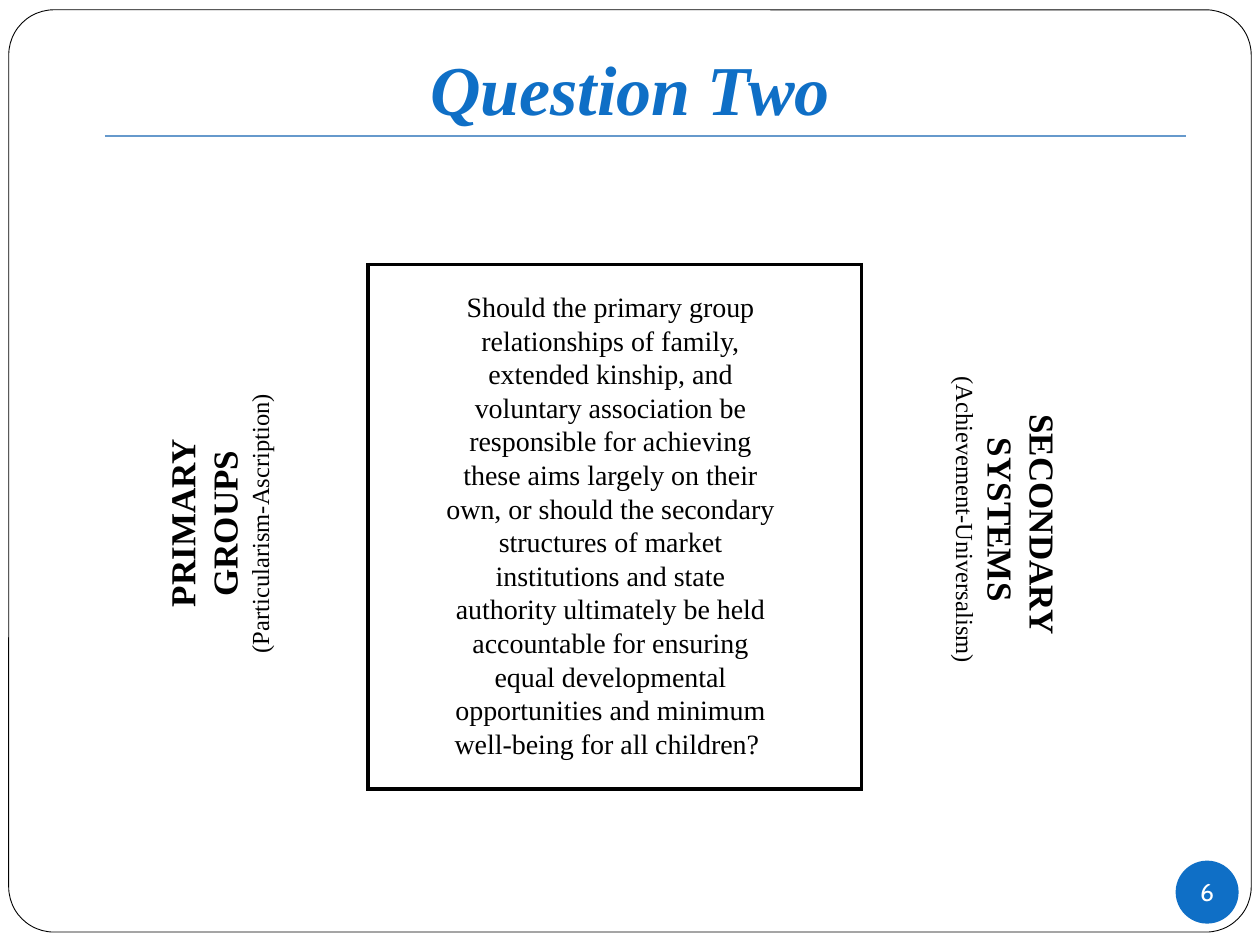
from pptx import Presentation
from pptx.dml.color import RGBColor
from pptx.enum.shapes import MSO_CONNECTOR, MSO_SHAPE as Preset
from pptx.enum.text import MSO_ANCHOR as Anchor, PP_ALIGN as Align
from pptx.oxml import parse_xml
from pptx.oxml.ns import nsdecls
from pptx.util import Pt

COLORS = {"ink": "000000", "paper": "FFFFFF", "blue": "0F6FC6", "rule": "6699CC"}
SERIF = "Times New Roman"
QUESTION = (
    "Should the primary group relationships of family, extended kinship, and "
    "voluntary association be responsible for achieving these aims largely on "
    "their own, or should the secondary structures of market institutions and "
    "state authority ultimately be held accountable for ensuring equal "
    "developmental opportunities and minimum well-being for all children? "
)


def color(name):
    return RGBColor.from_string(COLORS[name])


def add_text(frame, text, size, font=SERIF, ink="ink", bold=False, italic=False,
             new=False):
    """Write one centred paragraph, in a new paragraph if asked."""
    frame.word_wrap = True
    para = frame.add_paragraph() if new else frame.paragraphs[0]
    para.alignment = Align.CENTER
    span = para.add_run()
    span.text = text
    span.font.name, span.font.size = font, Pt(size)
    span.font.bold, span.font.italic = bold, italic
    span.font.color.rgb = color(ink)


def add_box(page, left, top, width, height):
    place = [Pt(value) for value in (left, top, width, height)]
    return page.shapes.add_textbox(*place).text_frame


def add_shape(page, preset, left, top, width, height, fill="paper", line=None):
    place = [Pt(value) for value in (left, top, width, height)]
    shape = page.shapes.add_shape(preset, *place)
    shape.shadow.inherit = False
    shape.fill.solid()
    shape.fill.fore_color.rgb = color(fill)
    if line:
        shape.line.color.rgb = color(line)
        shape.line.width = Pt(0.5)
    else:
        shape.line.fill.background()
    return shape


def add_side_label(page, heading, note, left, top, width, turn):
    shape = add_shape(page, Preset.RECTANGLE, left, top, width, 72.7)
    shape.rotation = turn
    frame = shape.text_frame
    frame.vertical_anchor = Anchor.TOP
    add_text(frame, heading, 20, bold=True)
    add_text(frame, note, 14, new=True)


def add_rule(page, left, right, top):
    rule = page.shapes.add_connector(
        MSO_CONNECTOR.STRAIGHT, Pt(left), Pt(top), Pt(right), Pt(top))
    rule.line.color.rgb = color("rule")
    rule.line.width = Pt(0.75)
    rule._element.spPr.append(parse_xml(f"<a:effectLst {nsdecls('a')}/>"))


def set_borders(cell, drawn):
    """Draw the named sides (L, R, T, B) and hide the others."""
    props = cell._tc.get_or_add_tcPr()
    for index, side in enumerate("LRTB"):
        paint = "<a:noFill/>"
        if side in drawn:
            paint = f'<a:solidFill><a:srgbClr val="{COLORS["ink"]}"/></a:solidFill>'
        props.insert(index, parse_xml(
            f'<a:ln{side} {nsdecls("a")} w="{Pt(2.25)}">{paint}</a:ln{side}>'))


def add_outlined_table(page, left, top, width, heights):
    table = page.shapes.add_table(
        2, 2, Pt(left), Pt(top), Pt(width), Pt(sum(heights))).table
    table.first_row = table.horz_banding = False
    for row, height in enumerate(heights):
        table.rows[row].height = Pt(height)
        for column in range(2):
            cell = table.cell(row, column)
            cell.fill.background()
            set_borders(cell, "TB"[row] + "LR"[column])


def add_page_number(page, text):
    badge = add_shape(page, Preset.OVAL, 671.8, 491.8, 36, 36, fill="blue")
    frame = badge.text_frame
    frame.margin_left = frame.margin_right = 0
    frame.margin_top = frame.margin_bottom = 0
    frame.vertical_anchor = Anchor.MIDDLE
    add_text(frame, text, 14, font="Cabin", ink="paper")
    frame.word_wrap = False


def main():
    deck = Presentation()
    deck.slide_width, deck.slide_height = Pt(720), Pt(540)
    page = deck.slides.add_slide(deck.slide_layouts[6])

    # Rounded page frame
    border = add_shape(page, Preset.ROUNDED_RECTANGLE, 5, 5.6, 710, 527, line="ink")
    border.adjustments[0] = 0.049

    # Opposing sides
    add_side_label(page, " SECONDARY SYSTEMS", "(Achievement-Universalism)",
                   476.6, 260.6, 198, 90)
    add_side_label(page, "PRIMARY GROUPS", "(Particularism-Ascription)",
                   33.8, 262.8, 181.4, 270)

    # Title and rule
    add_text(add_box(page, 0, 22.3, 720, 55.4), "Question Two", 40,
             ink="blue", bold=True, italic=True)
    add_rule(page, 60, 678, 77.8)

    # Question in its outlined table
    add_outlined_table(page, 210.2, 151.2, 282.2, (121, 178.6))
    add_text(add_box(page, 247.7, 162, 202.3, 278.6), QUESTION, 16)

    # Page number
    add_page_number(page, "6")

    deck.save("out.pptx")


if __name__ == "__main__":
    main()
